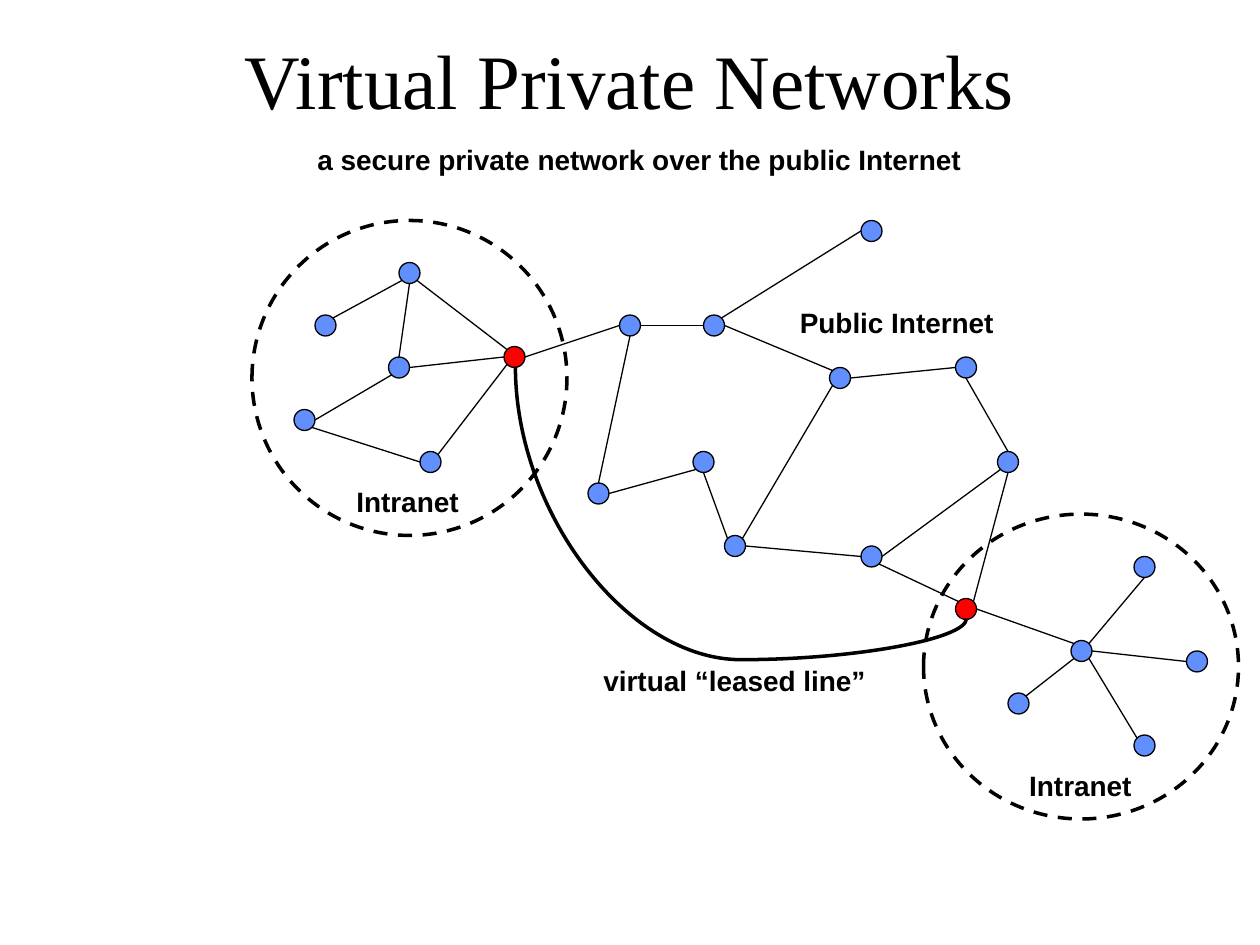
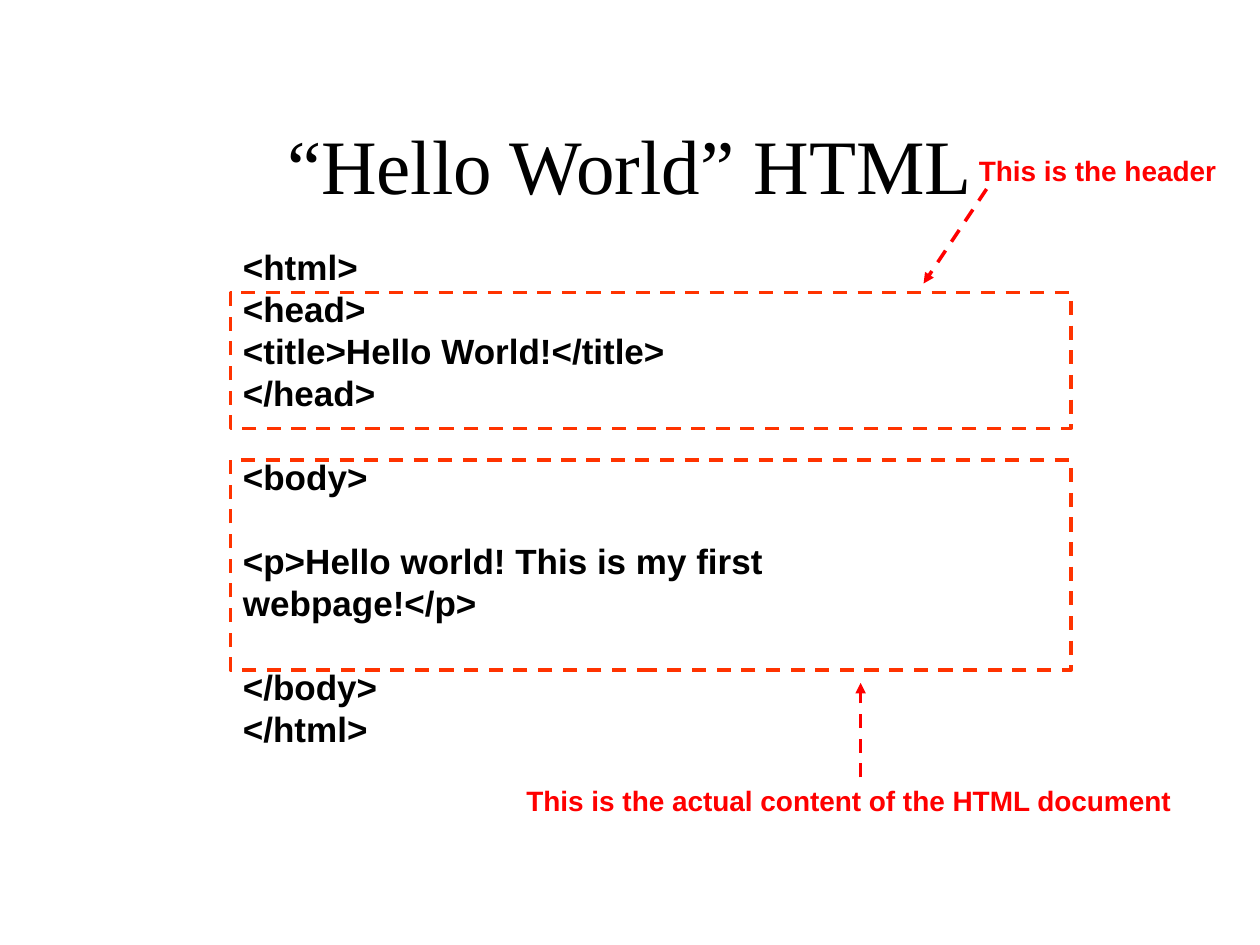
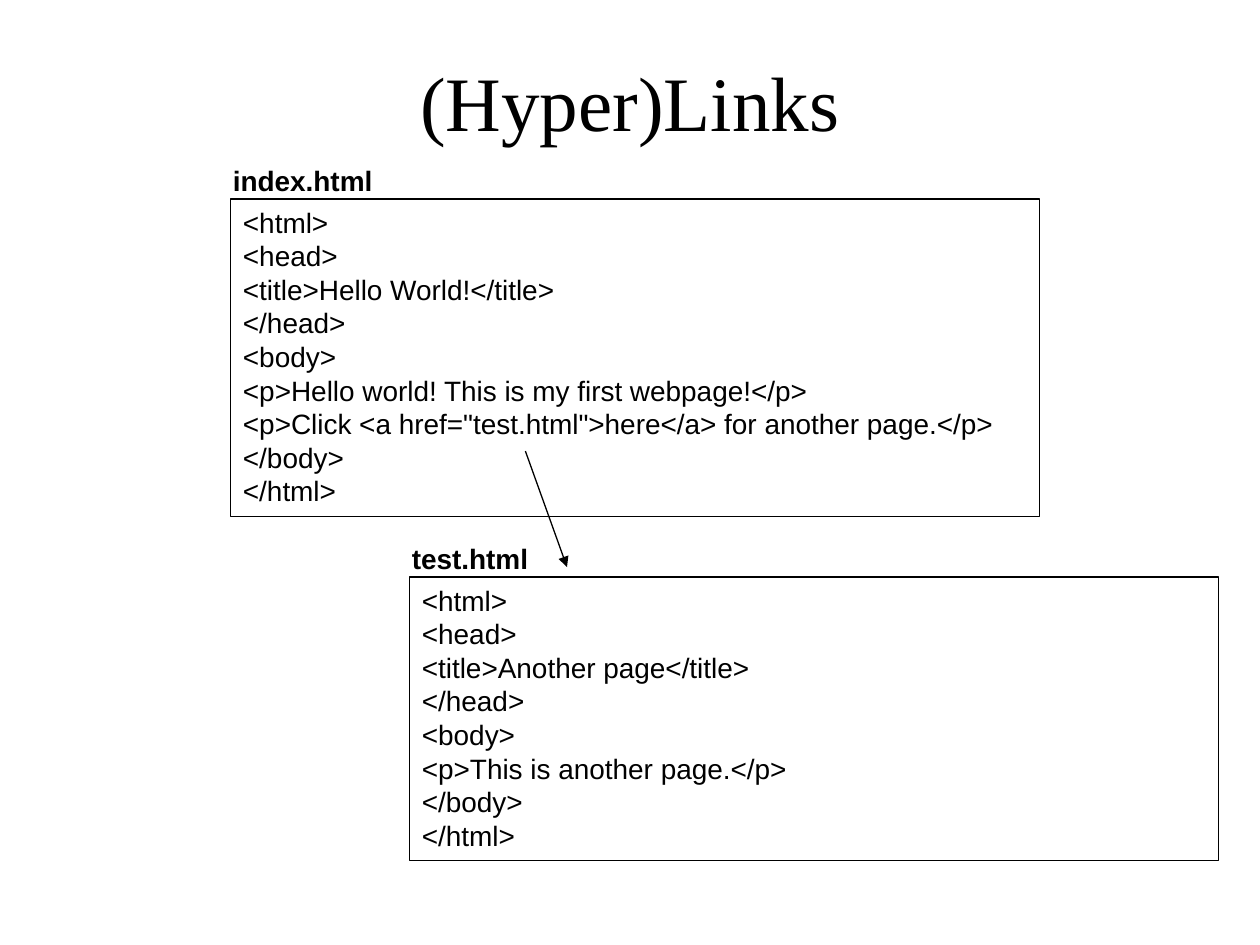
from lxml import etree
from pptx import Presentation
from pptx import util as u
from pptx.dml.color import RGBColor
from pptx.enum import dml, shapes, text
from pptx.oxml import ns

HUES = {"ink": "000000", "node": "618FFD", "red": "FF0000", "frame": "FF3300"}
SANS, SERIF = "Arial", "Times New Roman"
GRID = 12
SITES = {"n": (0, -1), "s": (0, 1), "w": (-1, 0), "e": (1, 0),
         "nw": (-0.71, -0.71), "ne": (0.71, -0.71),
         "sw": (-0.71, 0.71), "se": (0.71, 0.71)}
NODES = {
    "a": (39, 26), "b": (31, 31), "c": (29, 40), "d": (41, 44), "e": (38, 35),
    "gate": (49, 34), "h": (60, 31), "i": (68, 31), "j": (83, 22),
    "k": (80, 36), "l": (92, 35), "m": (96, 44), "n": (57, 47),
    "o": (67, 44), "p": (70, 52), "q": (83, 53), "door": (92, 58),
    "hub": (103, 62), "t": (109, 54), "u": (114, 63), "v": (109, 71),
    "w": (97, 67)}
LINKS = """
b.ne a.sw, e.n a.s, c.e e.sw, a.se gate.nw, e.e gate.w, d.ne gate.sw,
c.se d.w, gate.e h.w, i.ne j.w, h.e i.w, i.e k.nw, n.n h.s, n.e o.sw,
k.e l.w, p.ne k.sw, p.nw o.s, p.e q.w, l.s m.n, q.e m.sw, q.se door.nw,
door.ne m.s, door.e hub.nw, w.ne hub.sw, v.nw hub.se, u.w hub.e, t.s hub.ne
"""
HELLO = ["<html>", "<head>", "<title>Hello World!</title>", "</head>",
         "<body>", "<p>Hello world! This is my first webpage!</p>",
         "</body>", "</html>"]
INDEX = HELLO[:6] + [
    '<p>Click <a href="test.html">here</a> for another page.</p>'] + HELLO[6:]
TEST = HELLO[:2] + ["<title>Another page</title>"] + HELLO[3:5] + [
    "<p>This is another page.</p>"] + HELLO[6:]


def hue(name):
    """Return a named colour."""
    return RGBColor.from_string(HUES[name])


def span(*sizes):
    """Turn numbers into inch lengths."""
    return [u.Inches(size) for size in sizes]


def write(frame, lines, size=16, bold=False, color="ink", font=SANS,
          align="LEFT", anchor="TOP", wrap=False, gaps=()):
    """Fill a text frame, leaving a line free above each index in gaps."""
    frame.word_wrap = wrap
    frame.vertical_anchor = text.MSO_ANCHOR[anchor]
    for index, line in enumerate(lines):
        par = frame.paragraphs[0] if index == 0 else frame.add_paragraph()
        par.alignment = text.PP_ALIGN[align]
        par.line_spacing = u.Pt(1.2 * size)
        if index in gaps:
            par.space_before = u.Pt(1.2 * size)
        run = par.add_run()
        run.text = line
        run.font.name, run.font.size = font, u.Pt(size)
        run.font.bold, run.font.color.rgb = bold, hue(color)


def label(tree, words, left, top, width, color="ink"):
    """Add a bold one-line label."""
    box = tree.add_textbox(*span(left, top, width, 0.37))
    write(box.text_frame, [words], bold=True, color=color)
    box.text_frame.auto_size = text.MSO_AUTO_SIZE.SHAPE_TO_FIT_TEXT


def page(deck, title, top):
    """Add a blank slide with a title and return its shapes."""
    tree = deck.slides.add_slide(deck.slide_layouts[6]).shapes
    box = tree.add_textbox(*span(0.75, top, 8.5, 1.25))
    write(box.text_frame, [title], size=44, font=SERIF, align="CENTER",
          anchor="MIDDLE", wrap=True)
    return tree


def stroke(line, color="ink", width=0.75, dash=False):
    """Style an outline or a connector line."""
    line.color.rgb, line.width = hue(color), u.Pt(width)
    if dash:
        line.dash_style = dml.MSO_LINE.DASH


def shape(tree, kind, box, fill=None, **look):
    """Add a preset shape, hollow unless a fill is named."""
    item = tree.add_shape(shapes.MSO_SHAPE[kind], *span(*box))
    item.shadow.inherit = False
    if fill:
        item.fill.solid()
        item.fill.fore_color.rgb = hue(fill)
    else:
        item.fill.background()
    stroke(item.line, **look)
    return item


def wire(tree, start, end, kind="STRAIGHT", arrow=False, **look):
    """Add a connector between two points."""
    item = tree.add_connector(shapes.MSO_CONNECTOR[kind], *span(*start, *end))
    stroke(item.line, **look)
    props = item._element.spPr
    if arrow:
        etree.SubElement(item.line._get_or_add_ln(), ns.qn("a:tailEnd"),
                         type="triangle")
    etree.SubElement(props, ns.qn("a:effectLst"))
    return item


def lease(tree):
    """Draw the curved line that joins both gateways from below."""
    item = wire(tree, (6.88, 2.12), (4.88, 5.7), kind="CURVE", width=2)
    props = item._element.spPr
    props.find(ns.qn("a:xfrm")).set("rot", str(270 * 60000))
    geom = props.find(ns.qn("a:prstGeom"))
    guides = geom.find(ns.qn("a:avLst"))
    if guides is None:
        guides = etree.SubElement(geom, ns.qn("a:avLst"))
    etree.SubElement(guides, ns.qn("a:gd"), name="adj1", fmla="val 116300")


def site(spot):
    """Find the point on a node's rim, such as 'hub.ne'."""
    name, side = spot.split(".")
    return [(mid + off) / GRID for mid, off in zip(NODES[name], SITES[side])]


def vpn(deck):
    """Build the network slide."""
    tree = page(deck, "Virtual Private Networks", 0)
    for name, (x, y) in NODES.items():
        fill = "red" if name in ("gate", "door") else "node"
        shape(tree, "OVAL", ((x - 1) / GRID, (y - 1) / GRID,
                             2 / GRID, 2 / GRID), fill=fill)
    for link in LINKS.split(","):
        wire(tree, *map(site, link.split()))
    label(tree, "Intranet", 2.73, 3.8, 1.02)
    label(tree, "Intranet", 8.07, 6.05, 1.02)
    label(tree, "a secure private network over the public Internet",
          2.42, 1.08, 5.33)
    label(tree, "Public Internet", 6.25, 2.38, 1.74)
    lease(tree)
    for ring in ((2, 1.75, 2.5, 2.5), (7.33, 4.08, 2.5, 2.42)):
        shape(tree, "OVAL", ring, width=2, dash=True)
    label(tree, "virtual “leased line”", 4.69, 5.22, 2.29)


def mark(tree, words, spot, top, height, start, end):
    """Frame a part of the code, with a red label and arrow."""
    group = tree.add_group_shape().shapes
    shape(group, "RECTANGLE", (1.83, top, 6.67, height),
          color="frame", width=2, dash=True)
    label(group, words, *spot, color="red")
    wire(group, start, end, arrow=True, color="red", width=2, dash=True)


def hello(deck):
    """Build the slide with the first HTML page."""
    tree = page(deck, "“Hello World” HTML", 0.67)
    code = tree.add_textbox(*span(1.83, 1.9, 6.2, 4.1))
    write(code.text_frame, HELLO, size=20, bold=True, wrap=True,
          gaps=(4, 5, 6))
    mark(tree, "This is the header", (7.67, 1.17, 2.09), 2.32, 1.08,
         (7.83, 1.5), (7.33, 2.25))
    mark(tree, "This is the actual content of the HTML document",
         (4.08, 6.17, 5.34), 3.65, 1.67, (6.83, 6.17), (6.83, 5.42))


def file(tree, name, lines, left, top, height):
    """Show a named file as code in a box."""
    box = shape(tree, "RECTANGLE", (left, top, 6.42, height))
    write(box.text_frame, lines, wrap=True)
    label(tree, name, left - 0.08, top - 0.33, 1.4)


def links(deck):
    """Build the slide with two linked pages."""
    tree = page(deck, "(Hyper)Links", 0.17)
    file(tree, "index.html", INDEX, 1.83, 1.58, 2.52)
    file(tree, "test.html", TEST, 3.25, 4.58, 2.25)
    wire(tree, (4.17, 3.58), (4.5, 4.5), arrow=True)


def main():
    """Build and save the deck."""
    deck = Presentation()
    deck.slide_width, deck.slide_height = span(10, 7.5)
    for build in (vpn, hello, links):
        build(deck)
    deck.save("out.pptx")


if __name__ == "__main__":
    main()
